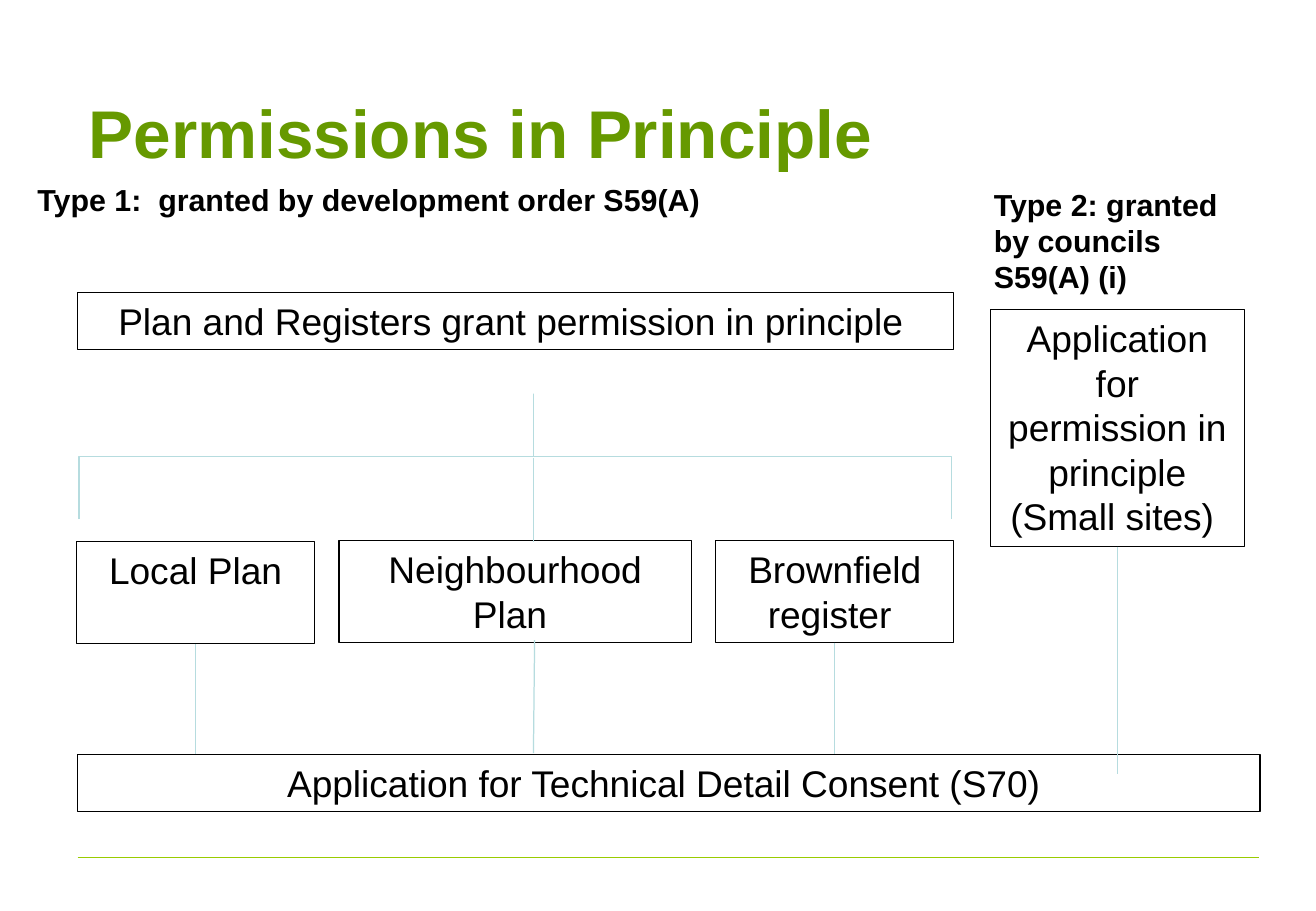
"""Build the Permissions in Principle slide: routes to technical detail consent."""
from lxml.etree import SubElement
from pptx import Presentation
from pptx.dml.color import RGBColor
from pptx.enum.shapes import MSO_CONNECTOR as Connector, MSO_SHAPE as Shape
from pptx.enum.text import MSO_ANCHOR as Anchor, PP_ALIGN as Align
from pptx.oxml.ns import qn
from pptx.util import Inches, Pt

WIDTH, HEIGHT = 10.83, 7.5
GREEN = RGBColor(0x66, 0x99, 0x00)
LIME = RGBColor(0x99, 0xCC, 0x00)
AQUA = RGBColor(0xB6, 0xDC, 0xDF)
BLACK = RGBColor(0, 0, 0)

COLUMNS = {
    "routes": (0.64, 7.21), "local": (0.63, 1.96), "neighbourhood": (2.79, 2.9),
    "brownfield": (5.89, 1.96), "councils": (8.15, 2.09), "all": (0.64, 9.73),
    "title": (0.63, 9.34), "type 1": (0.21, 6.34), "type 2": (8.08, 2.22),
}
ROWS = {
    "title": (0.64, 1.03), "type 1": (1.44, 0.4), "type 2": (1.48, 1.01),
    "grant": (2.41, 0.47), "small": (2.55, 1.95), "local": (4.46, 0.84),
    "plans": (4.45, 0.84), "consent": (6.21, 0.47),
}

TITLE = "Permissions in Principle"
HEADINGS = [
    ("type 1", "Type 1:  granted by development order S59(A)"),
    ("type 2", "Type 2: granted by councils S59(A) (i)"),
]
BOXES = [
    ("routes", "grant", ["Plan and Registers grant permission in principle "]),
    ("councils", "small", ["Application for permission in principle", "(Small sites) "]),
    ("local", "local", ["Local Plan"]),
    ("neighbourhood", "plans", ["Neighbourhood Plan "]),
    ("brownfield", "plans", ["Brownfield register "]),
    ("all", "consent", ["Application for Technical Detail Consent (S70) "]),
]
CONSENT_TOP = ROWS["consent"][0]
DROPS = [("local", CONSENT_TOP), ("brownfield", CONSENT_TOP), ("councils", 6.37)]
STEM = 4.39
FREE_LINES = [
    ((STEM + 0.01, 5.27), (STEM, 6.2), AQUA),
    ((STEM, 3.77), (STEM, 4.46), AQUA),
    ((0.64, 7.06), (10.36, 7.06), LIME),
]
BRACE_CENTRE, BRACE_SIZE = (4.24, 3.76), (1.03, 7.18)


def frame(column, row):
    """Return left, top, width and height of a grid cell."""
    left, width = COLUMNS[column]
    top, height = ROWS[row]
    return [Inches(length) for length in (left, top, width, height)]


def write(box, lines, size, color=BLACK, bold=False, align=Align.LEFT, inset=0.05):
    """Fill a shape with formatted paragraphs."""
    text = box.text_frame
    layout = {"word_wrap": True, "vertical_anchor": Anchor.TOP, "margin_top": Inches(inset)}
    for name, value in layout.items():
        setattr(text, name, value)
    text.text = "\n".join(lines)
    for para in text.paragraphs:
        para.alignment = align
        for span in para.runs:
            for name, value in {"name": "Arial", "size": Pt(size), "bold": bold}.items():
                setattr(span.font, name, value)
            span.font.color.rgb = color


def outline(item, color):
    """Give a shape or connector a thin line."""
    item.line.color.rgb = color
    item.line.width = Pt(0.75)


def add_outlined(page, kind, place, color):
    """Add an unfilled shape without shadow."""
    shape = page.shapes.add_shape(kind, *place)
    shape.shadow.inherit = False
    shape.fill.background()
    outline(shape, color)
    return shape


def add_line(page, start, end, color):
    """Add a straight connector without shadow."""
    points = [Inches(length) for length in (*start, *end)]
    line = page.shapes.add_connector(Connector.STRAIGHT, *points)
    outline(line, color)
    SubElement(line._element.spPr, qn("a:effectLst"))
    return line


def main():
    """Assemble and save the deck."""
    deck = Presentation()
    deck.slide_width, deck.slide_height = Inches(WIDTH), Inches(HEIGHT)
    page = deck.slides.add_slide(deck.slide_layouts[5])

    title = page.shapes.title
    title.left, title.top, title.width, title.height = frame("title", "title")
    write(title, [TITLE], 40, GREEN, True, inset=0.11)

    boxes = {}
    for column, row, lines in BOXES:
        boxes[column] = add_outlined(page, Shape.RECTANGLE, frame(column, row), BLACK)
        write(boxes[column], lines, 22, align=Align.CENTER)

    corner = [centre - size / 2 for centre, size in zip(BRACE_CENTRE, BRACE_SIZE)]
    place = [Inches(length) for length in (*corner, *BRACE_SIZE)]
    brace = add_outlined(page, Shape.LEFT_BRACE, place, AQUA)
    brace.rotation = 90
    brace.adjustments[0], brace.adjustments[1] = 0, 0.479

    for column, bottom in DROPS:
        left, width = COLUMNS[column]
        middle = left + width / 2
        line = add_line(page, (middle, 5.3), (middle, bottom), AQUA)
        line.begin_connect(boxes[column], 2)
    for start, end, color in FREE_LINES:
        add_line(page, start, end, color)

    for name, heading in HEADINGS:
        write(page.shapes.add_textbox(*frame(name, name)), [heading], 18, bold=True)

    deck.save("out.pptx")


if __name__ == "__main__":
    main()
